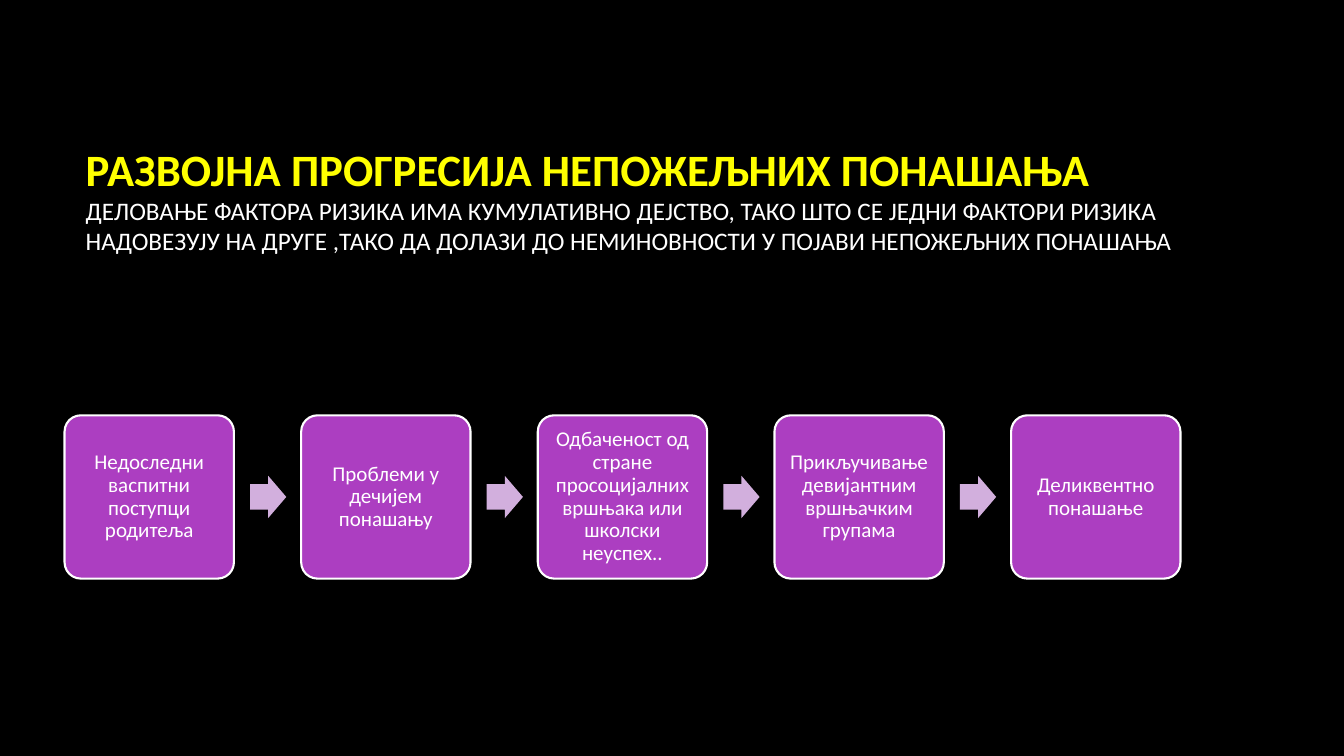
from copy import deepcopy
from dataclasses import dataclass

from pptx import Presentation
from pptx.dml.color import RGBColor
from pptx.enum.shapes import MSO_SHAPE
from pptx.enum.text import MSO_ANCHOR, MSO_AUTO_SIZE, PP_ALIGN
from pptx.oxml.ns import qn
from pptx.util import Inches, Pt

HEADING = "РАЗВОЈНА ПРОГРЕСИЈА НЕПОЖЕЉНИХ ПОНАШАЊА"
EXPLANATION = (
    "ДЕЛОВАЊЕ ФАКТОРА РИЗИКА ИМА КУМУЛАТИВНО ДЕЈСТВО, ТАКО ШТО СЕ ЈЕДНИ ФАКТОРИ РИЗИКА "
    "НАДОВЕЗУЈУ НА ДРУГЕ ,ТАКО ДА ДОЛАЗИ ДО НЕМИНОВНОСТИ У ПОЈАВИ НЕПОЖЕЉНИХ ПОНАШАЊА"
)
STAGES = [
    "Недоследни васпитни поступци родитеља",
    "Проблеми у дечијем понашању",
    "Одбаченост од стране просоцијалних вршњака или школски неуспех..",
    "Прикључивање девијантним вршњачким групама",
    "Деликвентно понашање",
]


@dataclass(frozen=True)
class Theme:
    font: str = "Calibri"
    background: RGBColor = RGBColor(0x00, 0x00, 0x00)
    heading: RGBColor = RGBColor(0xFF, 0xFF, 0x00)
    text: RGBColor = RGBColor(0xFF, 0xFF, 0xFF)
    stage: RGBColor = RGBColor(0xAC, 0x3E, 0xC1)
    arrow: RGBColor = RGBColor(0xD2, 0xAF, 0xDD)
    heading_size: int = 32
    explanation_size: int = 18
    stage_size: int = 15


THEME = Theme()

# Flow geometry in inches
FLOW_LEFT, FLOW_MIDDLE = 0.64, 4.93
STAGE_WIDTH, STAGE_HEIGHT = 1.68, 1.62
STAGE_PITCH = STAGE_WIDTH * 1.4 - 0.005
ARROW_WIDTH, ARROW_HEIGHT = 0.36, 0.42
ARROW_GAP = 0.16
STAGE_INSET = 0.06


def style(span, size, color, bold=False):
    span.font.name = THEME.font
    span.font.size = Pt(size)
    span.font.bold = bold
    span.font.color.rgb = color


def add_flow_shape(page, kind, left, width, height, fill, adjustments):
    """Add a flat filled shape centred on the flow's middle line."""
    shape = page.shapes.add_shape(
        kind, Inches(left), Inches(FLOW_MIDDLE - height / 2), Inches(width), Inches(height)
    )
    shape.shadow.inherit = False
    shape.fill.solid()
    shape.fill.fore_color.rgb = fill
    for index, value in enumerate(adjustments):
        shape.adjustments[index] = value
    return shape


def add_title(page):
    title = page.shapes.title
    title.left, title.top = Inches(0.75), Inches(0.67)
    title.width, title.height = Inches(11.08), Inches(2.6)
    frame = title.text_frame
    frame.text = f"{HEADING}\v{EXPLANATION}"
    frame.word_wrap = True
    frame.auto_size = MSO_AUTO_SIZE.NONE
    frame.vertical_anchor = MSO_ANCHOR.MIDDLE
    para = frame.paragraphs[0]
    para.alignment = PP_ALIGN.LEFT
    heading, explanation = para.runs
    style(heading, THEME.heading_size, THEME.heading, bold=True)
    style(explanation, THEME.explanation_size, THEME.text)
    # The line break takes the heading's size, not the layout's larger one
    line_break = para._p.find(qn("a:br"))
    line_break.append(deepcopy(heading._r.find(qn("a:rPr"))))


def add_stage(page, left, label):
    box = add_flow_shape(page, MSO_SHAPE.ROUNDED_RECTANGLE, left,
                         STAGE_WIDTH, STAGE_HEIGHT, THEME.stage, [0.1])
    box.line.color.rgb = THEME.text
    box.line.width = Pt(1.5)
    frame = box.text_frame
    frame.text = label
    frame.word_wrap = True
    frame.vertical_anchor = MSO_ANCHOR.MIDDLE
    frame.margin_left = frame.margin_right = Inches(STAGE_INSET)
    frame.margin_top = frame.margin_bottom = Inches(STAGE_INSET)
    para = frame.paragraphs[0]
    para.alignment = PP_ALIGN.CENTER
    para.line_spacing = 0.9
    style(para.runs[0], THEME.stage_size, THEME.text)


def add_arrow(page, left):
    arrow = add_flow_shape(page, MSO_SHAPE.RIGHT_ARROW, left,
                           ARROW_WIDTH, ARROW_HEIGHT, THEME.arrow, [0.6, 0.5])
    arrow.line.fill.background()


def main():
    deck = Presentation()
    deck.slide_width, deck.slide_height = Inches(13.33), Inches(7.5)
    page = deck.slides.add_slide(deck.slide_layouts.get_by_name("Title Only"))
    page.background.fill.solid()
    page.background.fill.fore_color.rgb = THEME.background

    add_title(page)
    for index, label in enumerate(STAGES):
        left = FLOW_LEFT + index * STAGE_PITCH
        if index:
            add_arrow(page, left - STAGE_PITCH + STAGE_WIDTH + ARROW_GAP)
        add_stage(page, left, label)

    deck.save("out.pptx")


if __name__ == "__main__":
    main()
